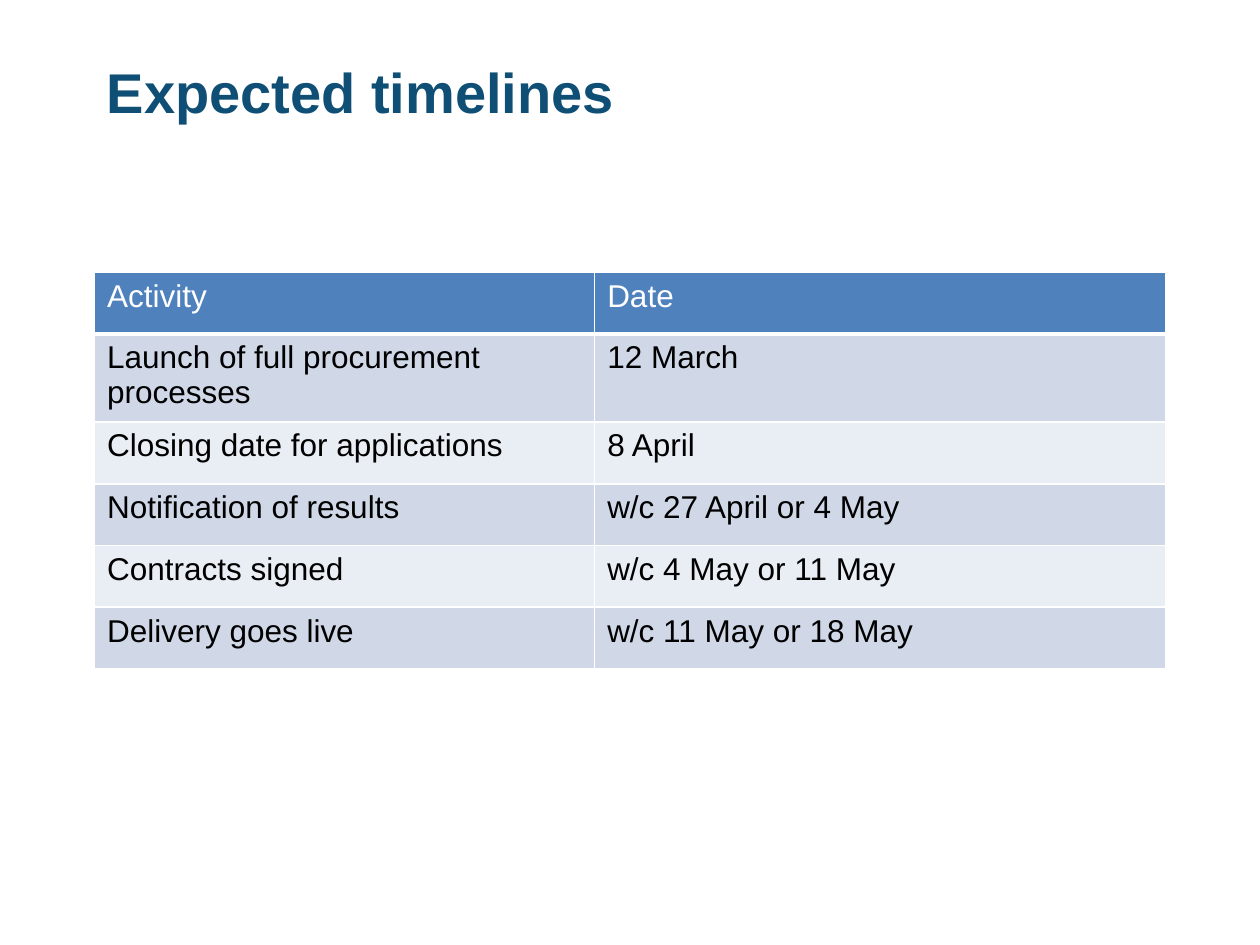
from dataclasses import dataclass

import pptx
import pptx.dml.color
import pptx.enum.text
import pptx.oxml
import pptx.oxml.ns
import pptx.util
from pptx.util import Inches

COLORS = {
    "title": "104F75",
    "header": "4F81BD",
    "dark_band": "D0D8E8",
    "light_band": "E9EDF4",
    "white": "FFFFFF",
    "black": "000000",
}
FONT = "Arial"
LEFT, WIDTH = Inches(0.75), Inches(8.5)
ROW_HEIGHT = Inches(0.49)
COLUMN_WIDTHS = (Inches(3.97), Inches(4.53))


@dataclass
class Milestone:
    activity: str
    date: str


HEADER = Milestone("Activity", "Date")
MILESTONES = [
    Milestone("Launch of full procurement processes", "12 March"),
    Milestone("Closing date for applications", "8 April"),
    Milestone("Notification of results", "w/c 27 April or 4 May"),
    Milestone("Contracts signed", "w/c 4 May or 11 May"),
    Milestone("Delivery goes live", "w/c 11 May or 18 May"),
]


def rgb(name: str) -> pptx.dml.color.RGBColor:
    return pptx.dml.color.RGBColor.from_string(COLORS[name])


def write_text(text_frame, text: str, *, size: float, color: str, bold: bool = False) -> None:
    text_frame.word_wrap = True
    run = text_frame.paragraphs[0].add_run()
    run.text = text
    run.font.name = FONT
    run.font.size = pptx.util.Pt(size)
    run.font.bold = bold
    run.font.color.rgb = rgb(color)


def set_borders(cell, *, color: str, bottom: float = 1) -> None:
    properties = cell._tc.get_or_add_tcPr()
    for side, width in (("L", 1), ("R", 1), ("T", 1), ("B", bottom)):
        properties.append(pptx.oxml.parse_xml(
            f'<a:ln{side} {pptx.oxml.ns.nsdecls("a")} w="{pptx.util.Pt(width)}">'
            f'<a:solidFill><a:srgbClr val="{COLORS[color]}"/></a:solidFill>'
            f'</a:ln{side}>'))


def fill_row(table, index: int, milestone: Milestone, *, fill: str, color: str,
             bottom: float = 1) -> None:
    table.rows[index].height = ROW_HEIGHT
    for cell, text in zip(table.rows[index].cells, (milestone.activity, milestone.date)):
        write_text(cell.text_frame, text, size=18, color=color)
        set_borders(cell, color="white", bottom=bottom)
        cell.fill.solid()
        cell.fill.fore_color.rgb = rgb(fill)


def add_title(slide, text: str) -> None:
    title = slide.shapes.add_textbox(LEFT, Inches(0.37), WIDTH, Inches(0.71))
    title.text_frame.vertical_anchor = pptx.enum.text.MSO_ANCHOR.MIDDLE
    write_text(title.text_frame, text, size=32, color="title", bold=True)


def add_timeline_table(slide) -> None:
    row_count = len(MILESTONES) + 1
    table = slide.shapes.add_table(
        row_count, len(COLUMN_WIDTHS), LEFT, Inches(2.16), WIDTH, ROW_HEIGHT * row_count).table
    for column, width in zip(table.columns, COLUMN_WIDTHS):
        column.width = width
    fill_row(table, 0, HEADER, fill="header", color="white", bottom=3)
    for index, milestone in enumerate(MILESTONES, start=1):
        band = "dark_band" if index % 2 else "light_band"
        fill_row(table, index, milestone, fill=band, color="black")


def main() -> None:
    presentation = pptx.Presentation()
    presentation.slide_width = Inches(10)
    presentation.slide_height = Inches(7.5)
    slide = presentation.slides.add_slide(presentation.slide_layouts[6])

    # Heading
    add_title(slide, "Expected timelines")

    # Activities and their dates
    add_timeline_table(slide)

    presentation.save("out.pptx")


if __name__ == "__main__":
    main()
